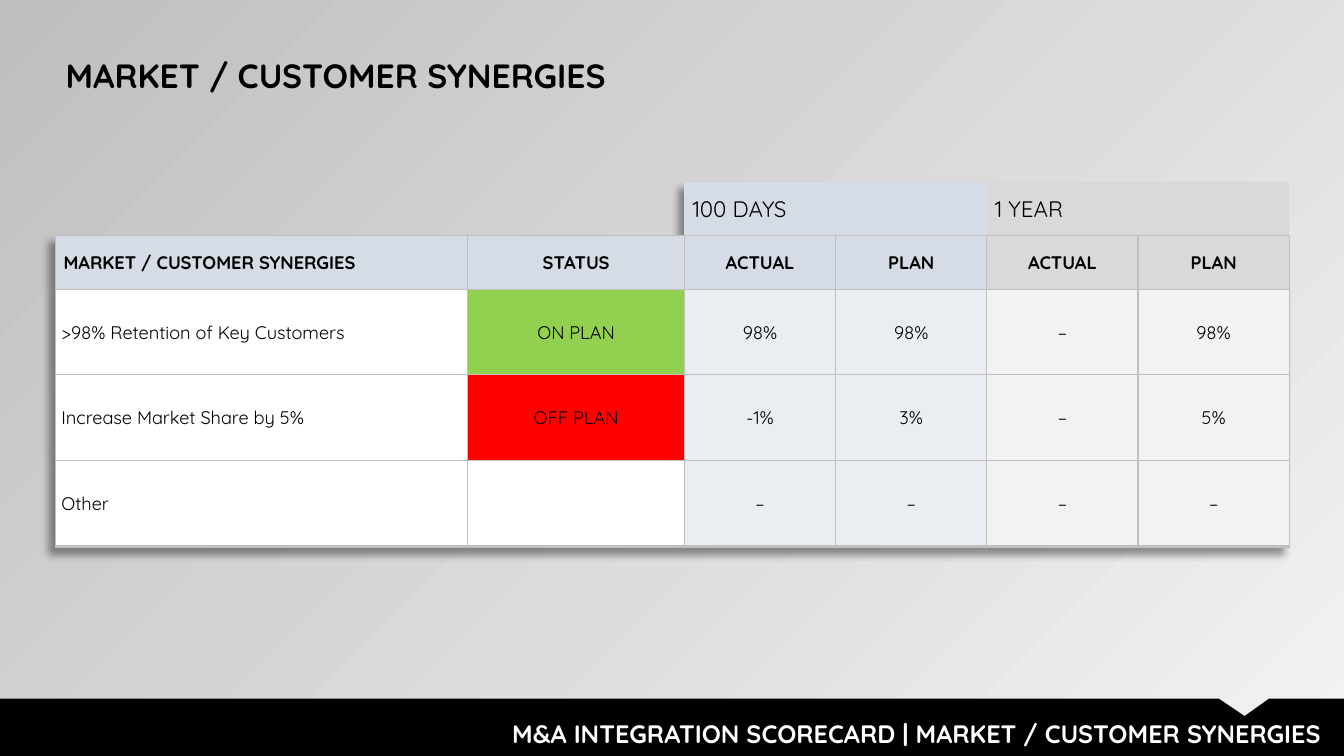
from dataclasses import dataclass

from lxml import etree
from pptx import Presentation, util as u
from pptx.dml.color import RGBColor
from pptx.enum import text
from pptx.oxml import ns

Pt = u.Pt


@dataclass(frozen=True)
class Theme:
    font: str = "Quicksand"
    black: str = "000000"
    white: str = "FFFFFF"
    blue: str = "D6DCE5"
    pale_blue: str = "EAEEF3"
    grey: str = "D9D9D9"
    pale_grey: str = "F2F2F2"
    border: str = "BFBFBF"
    on_plan: str = "92D050"
    off_plan: str = "FF0000"
    title_size: int = 24
    footer_size: int = 18
    period_size: int = 16
    cell_size: int = 13


THEME = Theme()
LEFT, CENTER, RIGHT = text.PP_ALIGN.LEFT, text.PP_ALIGN.CENTER, text.PP_ALIGN.RIGHT

COLUMN_WIDTHS = [294.5, 154.8, 108, 108, 108, 108]
ROW_HEIGHTS = [38.2, 38.2, 61.2, 61.2, 61.2]
ROWS = [
    ["", "", "100 DAYS", "", "1 YEAR", ""],
    ["MARKET / CUSTOMER SYNERGIES", "STATUS", "ACTUAL", "PLAN", "ACTUAL", "PLAN"],
    [">98% Retention of Key Customers", "ON PLAN", "98%", "98%", "–", "98%"],
    ["Increase Market Share by 5%", "OFF PLAN", "-1%", "3%", "–", "5%"],
    ["Other", "", "–", "–", "–", "–"],
]
STATUS_FILLS = {"ON PLAN": THEME.on_plan, "OFF PLAN": THEME.off_plan}


def color(value):
    return RGBColor.from_string(value)


def write(frame, words, size, ink=THEME.black, bold=False, align=LEFT):
    frame.text = words
    frame.word_wrap = True
    paragraph = frame.paragraphs[0]
    paragraph.alignment = align
    for font in [paragraph.font] + [run.font for run in paragraph.runs]:
        font.name = THEME.font
        font.size = Pt(size)
        font.bold = bold
        font.color.rgb = color(ink)


def paint_background(slide):
    fill = slide.background.fill
    fill.gradient()
    fill.gradient_angle = 135
    for stop, shade in zip(fill.gradient_stops, (THEME.pale_grey, THEME.border)):
        stop.color.rgb = color(shade)


def place_title(slide, left, top, width, height):
    title = slide.shapes.title
    title.left, title.top, title.width, title.height = map(Pt, (left, top, width, height))
    write(title.text_frame, "MARKET / CUSTOMER SYNERGIES", THEME.title_size, bold=True)
    title.text_frame.auto_size = text.MSO_AUTO_SIZE.NONE
    title.text_frame.vertical_anchor = text.MSO_ANCHOR.MIDDLE


def add_footer(slide, left, top, width, height):
    # Black band with a notch in its top edge
    right, bottom = left + width, top + height
    notch = [(right - 89.5, top), (right - 71, top + 12.5), (right - 53.5, top)]
    outline = notch + [(right, top), (right, bottom), (left, bottom)]
    builder = slide.shapes.build_freeform(Pt(left), Pt(top))
    builder.add_line_segments([(Pt(x), Pt(y)) for x, y in outline], close=True)
    band = builder.convert_to_shape()
    band.shadow.inherit = False
    band.fill.solid()
    band.fill.fore_color.rgb = color(THEME.black)
    band.line.fill.background()

    # Caption
    caption = slide.shapes.add_textbox(Pt(right - 662), Pt(top + 10.8), Pt(652.5), Pt(29))
    write(caption.text_frame, "M&A INTEGRATION SCORECARD | MARKET / CUSTOMER SYNERGIES",
          THEME.footer_size, THEME.white, True, RIGHT)


def set_borders(cell, widths):
    properties = cell._tc.get_or_add_tcPr()
    for index, side in enumerate("LRTB"):
        line = etree.Element(ns.qn(f"a:ln{side}"))
        width = widths.get(side)
        if width:
            line.set("w", str(Pt(width)))
            fill = etree.SubElement(line, ns.qn("a:solidFill"))
            etree.SubElement(fill, ns.qn("a:srgbClr"), val=THEME.border)
        else:
            etree.SubElement(line, ns.qn("a:noFill"))
        properties.insert(index, line)


def add_table_shadow(table):
    effects = etree.Element(ns.qn("a:effectLst"))
    shadow = etree.SubElement(effects, ns.qn("a:outerShdw"), blurRad=str(Pt(5)),
                              dist=str(Pt(6)), dir="8100000", algn="tr", rotWithShape="0")
    ink = etree.SubElement(shadow, ns.qn("a:srgbClr"), val=THEME.black)
    etree.SubElement(ink, ns.qn("a:alpha"), val="40000")
    table._tbl.tblPr.insert(0, effects)


def cell_fill(row, column, words):
    if row == 0 and column < 2:
        return None
    if row < 2:
        return THEME.blue if column < 4 else THEME.grey
    if column < 2:
        return STATUS_FILLS.get(words, THEME.white)
    return THEME.pale_blue if column < 4 else THEME.pale_grey


def format_cell(cell, row, column, words):
    left_aligned = row == 0 or column == 0
    write(cell.text_frame, words, THEME.period_size if row == 0 else THEME.cell_size,
          bold=row == 1, align=LEFT if left_aligned else CENTER)
    cell.vertical_anchor = text.MSO_ANCHOR.MIDDLE
    indent = 5.8 if row < 2 else 4.3
    cell.margin_left = Pt(indent if left_aligned else 0.7)
    cell.margin_right = cell.margin_top = Pt(0.7)
    cell.margin_bottom = 0

    shade = cell_fill(row, column, words)
    if shade:
        cell.fill.solid()
        cell.fill.fore_color.rgb = color(shade)
    else:
        cell.fill.background()

    if row == 0:
        set_borders(cell, {"B": 1})
    else:
        last = row == len(ROWS) - 1
        set_borders(cell, {"L": 1, "R": 1, "T": 1, "B": 2.25 if last else 1})


def add_scorecard(slide, left, top, width, height):
    frame = slide.shapes.add_table(len(ROWS), len(COLUMN_WIDTHS),
                                   Pt(left), Pt(top), Pt(width), Pt(height))
    table = frame.table
    table.first_row = table.horz_banding = False
    add_table_shadow(table)
    for column, column_width in zip(table.columns, COLUMN_WIDTHS):
        column.width = Pt(column_width)
    for row, row_height in zip(table.rows, ROW_HEIGHTS):
        row.height = Pt(row_height)

    for row, values in enumerate(ROWS):
        for column, words in enumerate(values):
            format_cell(table.cell(row, column), row, column, words)

    # Each period heading covers its actual and plan columns
    for column in (2, 4):
        table.cell(0, column).merge(table.cell(0, column + 1))


def main():
    presentation = Presentation()
    presentation.slide_width, presentation.slide_height = Pt(960), Pt(540)
    slide = presentation.slides.add_slide(presentation.slide_layouts[5])
    paint_background(slide)
    add_footer(slide, 0, 499, 960, 41)
    add_scorecard(slide, 39.6, 130.2, sum(COLUMN_WIDTHS), sum(ROW_HEIGHTS))
    place_title(slide, 39.6, 35.5, 485, 36)
    presentation.save("out.pptx")


if __name__ == "__main__":
    main()
